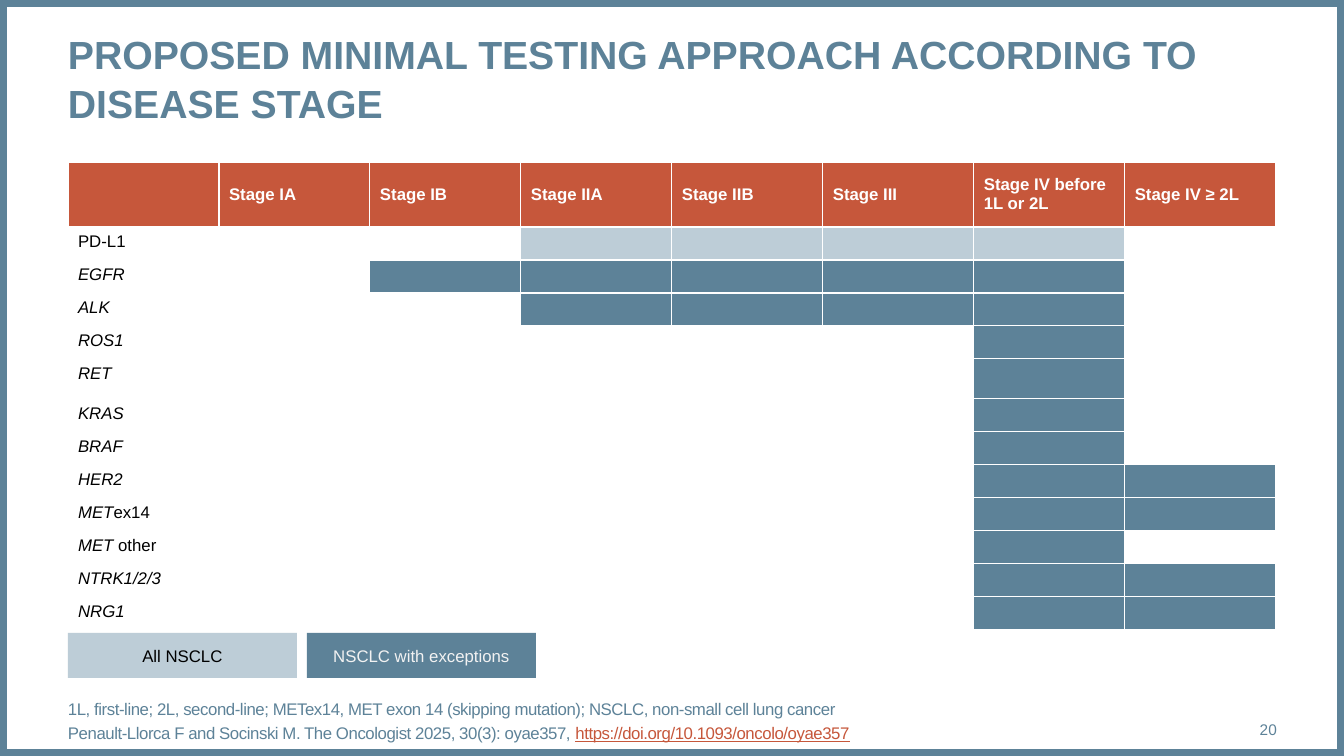
from lxml import etree
from pptx import Presentation, util as u
from pptx.dml.color import RGBColor
from pptx.enum import shapes, text
from pptx.oxml import ns

PX = 914400 / 100.8
BLUE = RGBColor(0x5D, 0x82, 0x98)
PALE = RGBColor(0xBD, 0xCD, 0xD7)
RUST = RGBColor(0xC6, 0x57, 0x3B)
WHITE = RGBColor(0xFF, 0xFF, 0xFF)
SMOKE = RGBColor(0xF2, 0xF2, 0xF2)
BLACK = RGBColor(0, 0, 0)

STAGES = ["", "Stage IA", "Stage IB", "Stage IIA", "Stage IIB", "Stage III",
          "Stage IV before 1L or 2L", "Stage IV ≥ 2L"]
TESTS = [
    ("", "PD-L1", 3, 6, PALE),
    ("EGFR", "", 2, 6, BLUE),
    ("ALK", "", 3, 6, BLUE),
    ("ROS1", "", 6, 6, BLUE),
    ("RET", "", 6, 6, BLUE),
    ("KRAS", "", 6, 6, BLUE),
    ("BRAF", "", 6, 6, BLUE),
    ("HER2", "", 6, 7, BLUE),
    ("MET", "ex14", 6, 7, BLUE),
    ("MET ", "other", 6, 6, BLUE),
    ("NTRK1/2/3", "", 6, 7, BLUE),
    ("NRG1", "", 6, 7, BLUE),
]


def px(n):
    """Turn pixels into EMU."""
    return u.Emu(round(n * PX))


def place(shape, box):
    """Move a shape to a box of left, top, width and height."""
    shape.left, shape.top, shape.width, shape.height = map(px, box)


def add_run(para, words, size, color, bold=False, slant=False):
    """Add one formatted run to a paragraph."""
    run = para.add_run()
    run.text = words
    font = run.font
    font.name, font.size, font.bold, font.italic = "Arial", u.Pt(size), bold, slant
    font.color.rgb = color
    return run


def set_frame(frame, anchor):
    """Give a text frame no margins, wrapping and an anchor."""
    frame.margin_left = frame.margin_top = frame.margin_right = frame.margin_bottom = 0
    frame.word_wrap = True
    frame.auto_size = text.MSO_AUTO_SIZE.NONE
    frame.vertical_anchor = anchor


def add_border(slide, box):
    """Draw the border around the slide."""
    rect = slide.shapes.add_shape(shapes.MSO_SHAPE.RECTANGLE, *map(px, box))
    rect.shadow.inherit = False
    rect.fill.background()
    rect.line.color.rgb = BLUE
    rect.line.width = u.Pt(10)


def add_title(slide, box):
    """Fill the title placeholder."""
    title = slide.shapes.title
    place(title, box)
    set_frame(title.text_frame, text.MSO_ANCHOR.TOP)
    para = title.text_frame.paragraphs[0]
    para.alignment = text.PP_ALIGN.LEFT
    para.line_spacing = 1.05
    add_run(para, "PROPOSED MINIMAL TESTING APPROACH ACCORDING TO DISEASE STAGE",
            28, BLUE, bold=True)


def add_notes(slide, box):
    """Fill the body placeholder with abbreviations and the reference."""
    body = slide.placeholders[1]
    place(body, box)
    frame = body.text_frame
    set_frame(frame, text.MSO_ANCHOR.MIDDLE)
    lines = [
        [("1L, first-line; 2L, second-line; METex14, MET exon 14 (skipping mutation); "
          "NSCLC, non-small cell lung cancer", BLUE)],
        [("Penault-Llorca F and Socinski M. The Oncologist 2025, 30(3): oyae357, ", BLUE),
         ("https://doi.org/10.1093/oncolo/oyae357", RUST)],
    ]
    for i, line in enumerate(lines):
        para = frame.add_paragraph() if i else frame.paragraphs[0]
        props = para._p.get_or_add_pPr()
        props.set("marL", "0")
        props.set("indent", "0")
        etree.SubElement(props, ns.qn("a:buNone"))
        para.space_before = u.Pt(3 if i else 0)
        for words, color in line:
            run = add_run(para, words, 12, color)
            run.font.underline = color == RUST
            run._r.get_or_add_rPr().set("spc", "-30")


def add_number(slide, box):
    """Add the slide number."""
    frame = slide.shapes.add_textbox(*map(px, box)).text_frame
    set_frame(frame, text.MSO_ANCHOR.MIDDLE)
    para = frame.paragraphs[0]
    para.alignment = text.PP_ALIGN.RIGHT
    add_run(para, "20", 11, BLUE)


def style_cell(cell, color):
    """Give a cell white borders, a fill and a small empty line."""
    props = cell._tc.get_or_add_tcPr()
    for side in ("lnL", "lnR", "lnT", "lnB"):
        line = etree.SubElement(props, ns.qn("a:" + side), w=str(u.Pt(1)))
        fill = etree.SubElement(line, ns.qn("a:solidFill"))
        etree.SubElement(fill, ns.qn("a:srgbClr"), val=str(WHITE))
    cell.fill.solid()
    cell.fill.fore_color.rgb = color
    para = cell.text_frame.paragraphs[0]
    para._p.get_or_add_endParaRPr().set("sz", "1200")
    return para


def add_grid(slide, box):
    """Build the table of tests by stage."""
    rows, cols = len(TESTS) + 1, len(STAGES)
    grid = slide.shapes.add_table(rows, cols, *map(px, box)).table
    grid.horz_banding = False
    for col in grid.columns:
        col.width = px(box[2] // cols)
    for row in grid.rows:
        row.height = px(33)
    grid.rows[0].height = px(65)
    grid.rows[5].height = px(40)
    for c, stage in enumerate(STAGES):
        cell = grid.cell(0, c)
        para = style_cell(cell, RUST)
        cell.vertical_anchor = text.MSO_ANCHOR.MIDDLE
        if stage:
            add_run(para, stage, 12, WHITE, bold=True)
    for r, (gene, rest, first, last, color) in enumerate(TESTS, 1):
        for c in range(cols):
            para = style_cell(grid.cell(r, c), color if first <= c <= last else WHITE)
            if c == 0:
                for words, slant in ((gene, True), (rest, False)):
                    if words:
                        add_run(para, words, 12, BLACK, slant=slant)


def add_legend(slide, box):
    """Lay out the legend keys side by side."""
    left, top, width, height = box
    gap = 10
    wide = (width - gap) // 2
    keys = [("All NSCLC", PALE, BLACK), ("NSCLC with exceptions", BLUE, SMOKE)]
    for i, (words, color, ink) in enumerate(keys):
        spot = (left + i * (wide + gap), top, wide, height)
        key = slide.shapes.add_shape(shapes.MSO_SHAPE.RECTANGLE, *map(px, spot))
        key.shadow.inherit = False
        key.fill.solid()
        key.fill.fore_color.rgb = color
        key.line.fill.background()
        key.text_frame.vertical_anchor = text.MSO_ANCHOR.MIDDLE
        para = key.text_frame.paragraphs[0]
        para.alignment = text.PP_ALIGN.CENTER
        add_run(para, words, 12, ink)


def main():
    """Build and save the slide."""
    deck = Presentation()
    deck.slide_width, deck.slide_height = px(1344), px(756)
    slide = deck.slides.add_slide(deck.slide_layouts[1])
    add_border(slide, (0, 0, 1344, 756))
    add_title(slide, (68, 28, 1208, 95))
    add_number(slide, (1190, 709, 87, 40))
    add_notes(slide, (68, 701, 1122, 40))
    add_grid(slide, (68, 162, 1208, 468))
    add_legend(slide, (68, 633, 468, 45))
    deck.save("out.pptx")


if __name__ == "__main__":
    main()
